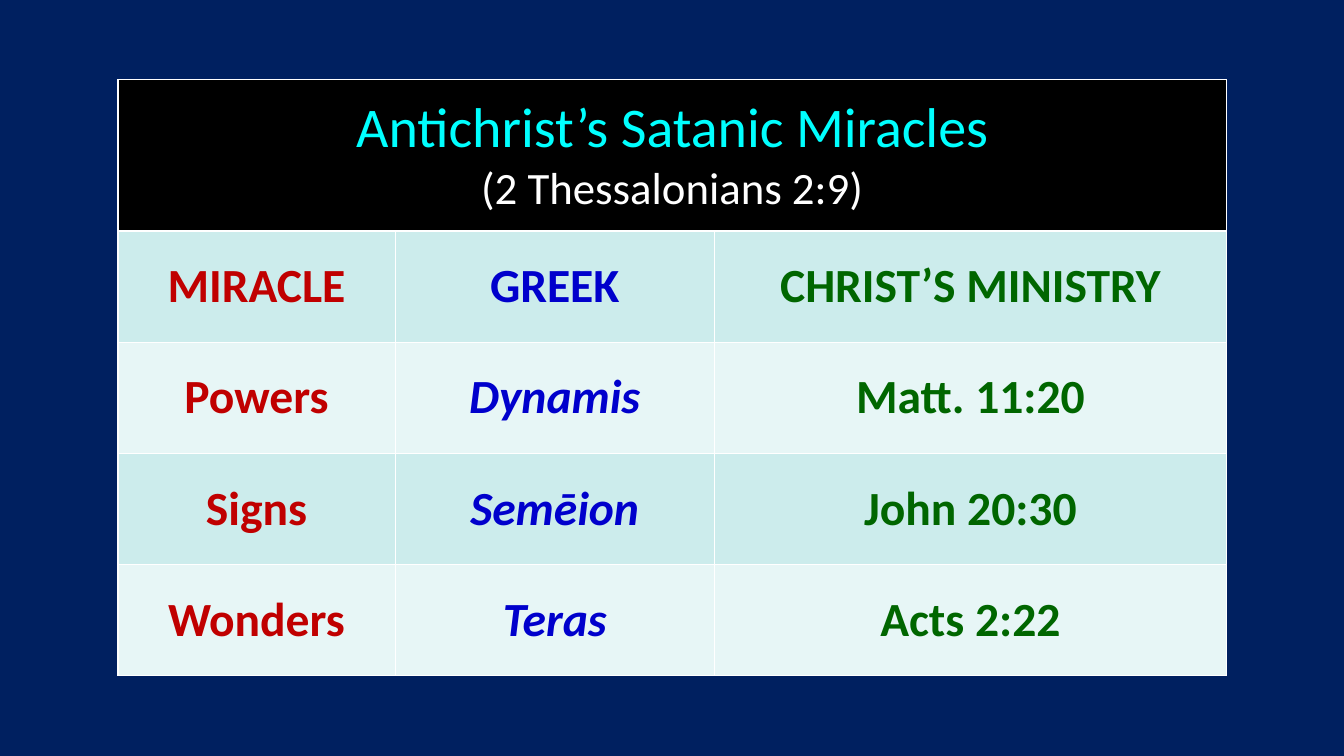
import pptx
import pptx.util
import pptx.dml.color
import pptx.enum.text
import pptx.oxml
import pptx.oxml.ns

Pt = pptx.util.Pt
RGBColor = pptx.dml.color.RGBColor

HEADING = [("Antichrist’s Satanic Miracles", 40), ("(2 Thessalonians 2:9)", 32)]
ROWS = [
    ("MIRACLE", "GREEK", "CHRIST’S MINISTRY"),
    ("Powers", "Dynamis", "Matt. 11:20"),
    ("Signs", "Semēion", "John 20:30"),
    ("Wonders", "Teras", "Acts 2:22"),
]

NAVY = RGBColor(0x00, 0x20, 0x60)
BLACK = RGBColor(0x00, 0x00, 0x00)
WHITE = RGBColor(0xFF, 0xFF, 0xFF)
CYAN = RGBColor(0x00, 0xFF, 0xFF)
RED = RGBColor(0xC0, 0x00, 0x00)
BLUE = RGBColor(0x00, 0x00, 0xCC)
GREEN = RGBColor(0x00, 0x66, 0x00)
BANDS = [RGBColor(0xCC, 0xEC, 0xEC), RGBColor(0xE7, 0xF6, 0xF6)]
HEADING_COLORS = [CYAN, WHITE]
COLUMN_COLORS = [RED, BLUE, GREEN]

FONT = "Calibri"
LEFT, TOP = 84.24, 57
COLUMN_WIDTHS = [198, 228, 366]
HEADING_HEIGHT, ROW_HEIGHT = 108, 79.4
GREEK_COLUMN = 1


def write(para, text, size=34, color=WHITE, bold=False, italic=False):
    para.alignment = pptx.enum.text.PP_ALIGN.CENTER
    span = para.add_run()
    span.text = text
    span.font.name = FONT
    span.font.size = Pt(size)
    span.font.color.rgb = color
    span.font.bold = bold
    span.font.italic = italic


def style_cell(cell, fill):
    cell.vertical_anchor = pptx.enum.text.MSO_ANCHOR.MIDDLE
    cell.fill.solid()
    cell.fill.fore_color.rgb = fill
    properties = cell._tc.get_or_add_tcPr()
    for index, side in enumerate(("lnL", "lnR", "lnT", "lnB")):
        border = pptx.oxml.parse_xml(
            f'<a:{side} {pptx.oxml.ns.nsdecls("a")} w="{Pt(1)}"><a:solidFill>'
            f'<a:srgbClr val="{WHITE}"/></a:solidFill></a:{side}>'
        )
        properties.insert(index, border)


def main():
    deck = pptx.Presentation()
    deck.slide_width, deck.slide_height = Pt(960), Pt(540)
    page = deck.slides.add_slide(deck.slide_layouts[6])
    page.background.fill.solid()
    page.background.fill.fore_color.rgb = NAVY

    heights = [HEADING_HEIGHT] + [ROW_HEIGHT] * len(ROWS)
    table = page.shapes.add_table(
        len(heights), len(COLUMN_WIDTHS), Pt(LEFT), Pt(TOP),
        Pt(sum(COLUMN_WIDTHS)), Pt(sum(heights)),
    ).table
    for column, width in zip(table.columns, COLUMN_WIDTHS):
        column.width = Pt(width)
    for row, height in zip(table.rows, heights):
        row.height = Pt(height)

    for cell in table.rows[0].cells:
        style_cell(cell, BLACK)
    heading = table.cell(0, 0)
    heading.merge(table.cell(0, len(COLUMN_WIDTHS) - 1))
    frame = heading.text_frame
    paras = [frame.paragraphs[0], frame.add_paragraph()]
    for para, (text, size), color in zip(paras, HEADING, HEADING_COLORS):
        write(para, text, size=size, color=color)

    for r, row in enumerate(ROWS):
        for c, text in enumerate(row):
            cell = table.cell(r + 1, c)
            style_cell(cell, BANDS[r % 2])
            write(cell.text_frame.paragraphs[0], text, color=COLUMN_COLORS[c],
                  bold=True, italic=r > 0 and c == GREEK_COLUMN)

    deck.save("out.pptx")


if __name__ == "__main__":
    main()
